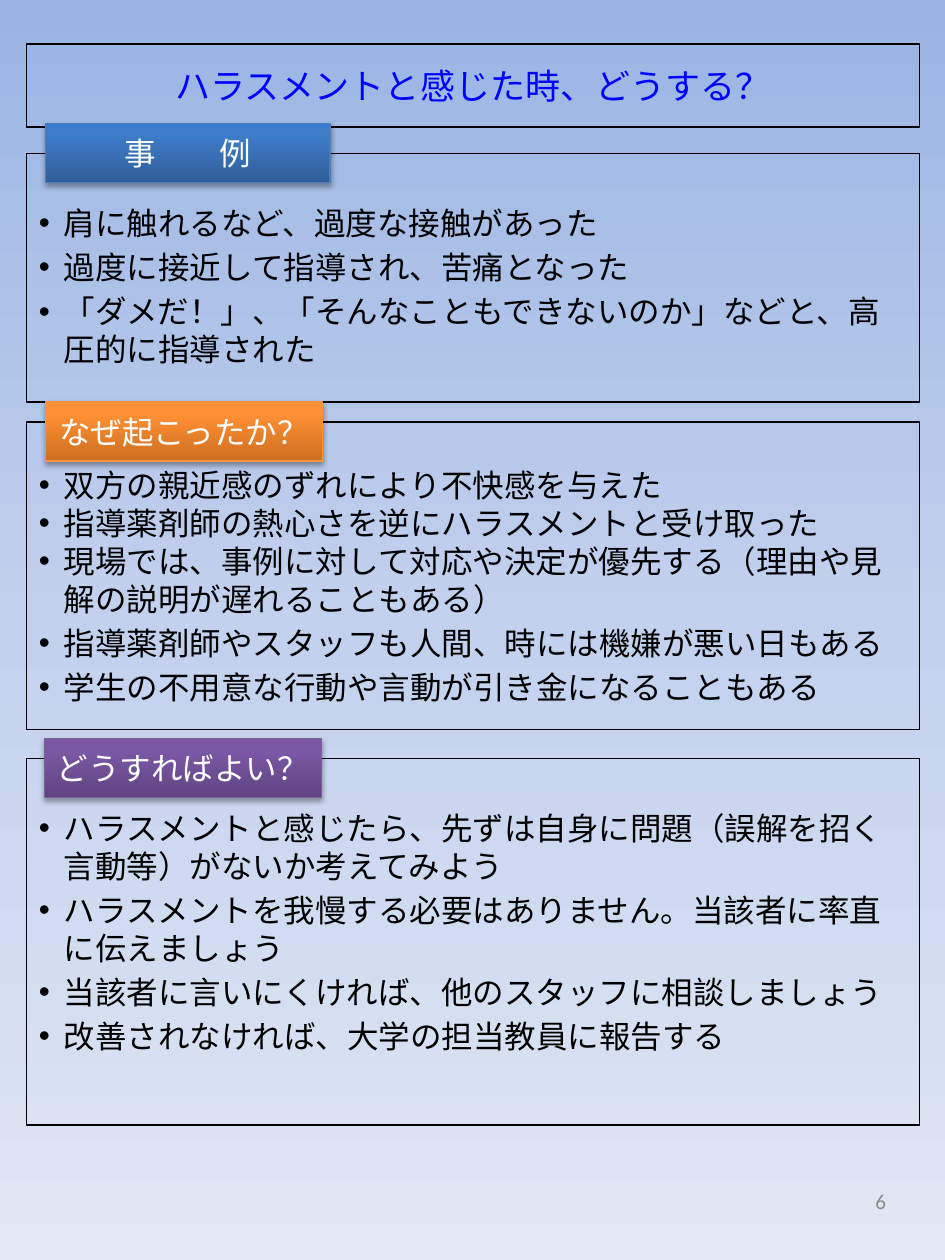
from dataclasses import dataclass
from typing import NamedTuple

from lxml.etree import SubElement
from pptx import Presentation
from pptx.dml.color import RGBColor
from pptx.enum.shapes import MSO_SHAPE as Preset
from pptx.enum.text import MSO_ANCHOR as Anchor, PP_ALIGN as Align
from pptx.oxml.ns import qn
from pptx.util import Inches, Pt


@dataclass(frozen=True)
class Theme:
    japanese: str = "Noto Sans CJK JP"
    latin: str = "Calibri"
    ink: str = "000000"
    heading: str = "0000FF"
    tab_text: str = "FFFFFF"
    number: str = "8C8C8C"
    heading_size: float = 20
    text_size: float = 18
    number_size: float = 12
    paragraph_gap: float = 3.6
    border: float = 0.75
    sky: tuple = ((0, "9AB5E4"), (50, "C2D1ED"), (100, "E1E8F5"))
    blue: tuple = ((0, "2F5F99"), (80, "3D7CC7"), (100, "3A7CCB"))
    orange: tuple = ((0, "CC6E20"), (80, "FF9034"), (100, "FF9136"))
    purple: tuple = ((0, "5F4480"), (80, "7B58A6"), (100, "7C57A8"))
    blue_edge: str = "4B7EBC"
    orange_edge: str = "F69240"
    purple_edge: str = "7D60A0"


THEME = Theme()
WIDTH, HEIGHT = Inches(7.5), Inches(10)
MARGIN, SPAN = 2.8, 94.53
TAB_HEIGHT = 4.7


class Box(NamedTuple):
    left: float
    top: float
    width: float
    height: float

    def lengths(self):
        sides = (WIDTH, HEIGHT, WIDTH, HEIGHT)
        return [round(share * side / 100) for share, side in zip(self, sides)]


def add(parent, tag, **attributes):
    return SubElement(parent, qn(tag), {key: str(value) for key, value in attributes.items()})


def apply_gradient(fill, owner, stops, angle):
    fill.gradient()
    gradient = next(owner.iter(qn("a:gradFill")))
    for child in list(gradient):
        gradient.remove(child)
    stop_list = add(gradient, "a:gsLst")
    for position, color in stops:
        stop = add(stop_list, "a:gs", pos=position * 1000)
        add(stop, "a:srgbClr", val=color)
    add(gradient, "a:lin", ang=angle * 60000, scaled=0)


def write(paragraph, text, *, size=THEME.text_size, color=THEME.ink, font=THEME.japanese,
          align=Align.LEFT, gap=0, bullet=False):
    paragraph.alignment = align
    paragraph.space_before = Pt(gap)
    run = paragraph.add_run()
    run.text = text
    run.font.size = Pt(size)
    run.font.name = font
    run.font.color.rgb = RGBColor.from_string(color)
    add(run.font._element, "a:ea", typeface=font)
    if bullet:
        properties = paragraph._p.get_or_add_pPr()
        properties.set("marL", str(Inches(0.2)))
        properties.set("indent", str(-Inches(0.2)))
        add(properties, "a:buFont", typeface="Arial")
        add(properties, "a:buChar", char="•")


def frame(slide, box, edge=THEME.ink, anchor=Anchor.MIDDLE):
    outline = slide.shapes.add_shape(Preset.RECTANGLE, *box.lengths())
    outline.shadow.inherit = False
    outline.fill.background()
    outline.line.color.rgb = RGBColor.from_string(edge)
    outline.line.width = Pt(THEME.border)
    outline.text_frame.word_wrap = True
    outline.text_frame.vertical_anchor = anchor
    return outline


def heading(slide, box, text):
    banner = frame(slide, box)
    write(banner.text_frame.paragraphs[0], text, size=THEME.heading_size,
          color=THEME.heading, align=Align.CENTER)


def tab(slide, box, text, stops, edge):
    label = frame(slide, box, edge)
    apply_gradient(label.fill, label._element.spPr, stops, 270)
    effects = label._element.spPr.find(qn("a:effectLst"))
    shadow = add(effects, "a:outerShdw", blurRad=Pt(3.1), dist=Pt(1.8),
                 dir=90 * 60000, rotWithShape=0)
    tint = add(shadow, "a:srgbClr", val=THEME.ink)
    add(tint, "a:alpha", val=35000)
    write(label.text_frame.paragraphs[0], text, color=THEME.tab_text, align=Align.CENTER)


def panel(slide, box, points, inset, tight=0):
    body = frame(slide, box, anchor=Anchor.TOP).text_frame
    body.margin_top = Inches(inset)
    for index, point in enumerate(points):
        paragraph = body.add_paragraph() if index else body.paragraphs[0]
        gap = THEME.paragraph_gap if index and index >= tight else 0
        write(paragraph, point, gap=gap, bullet=True)


def page_number(slide, box, text):
    corner = slide.shapes.add_textbox(*box.lengths()).text_frame
    corner.word_wrap = True
    corner.vertical_anchor = Anchor.MIDDLE
    write(corner.paragraphs[0], text, size=THEME.number_size, color=THEME.number,
          font=THEME.latin, align=Align.RIGHT)


def main():
    deck = Presentation()
    deck.slide_width, deck.slide_height = WIDTH, HEIGHT
    slide = deck.slides.add_slide(deck.slide_layouts[6])
    apply_gradient(slide.background.fill, slide._element, THEME.sky, 90)

    heading(slide, Box(MARGIN, 3.5, SPAN, 6.6), "ハラスメントと感じた時、どうする？")

    panel(slide, Box(MARGIN, 12.2, SPAN, 19.7), (
        "肩に触れるなど、過度な接触があった",
        "過度に接近して指導され、苦痛となった",
        "「ダメだ！」、「そんなこともできないのか」などと、高圧的に指導された",
    ), inset=0.4)
    tab(slide, Box(4.8, 9.8, 30.13, TAB_HEIGHT), "事　　例", THEME.blue, THEME.blue_edge)

    panel(slide, Box(MARGIN, 33.5, SPAN, 24.4), (
        "双方の親近感のずれにより不快感を与えた",
        "指導薬剤師の熱心さを逆にハラスメントと受け取った",
        "現場では、事例に対して対応や決定が優先する（理由や見解の説明が遅れることもある）",
        "指導薬剤師やスタッフも人間、時には機嫌が悪い日もある",
        "学生の不用意な行動や言動が引き金になることもある",
    ), inset=0.35, tight=3)
    tab(slide, Box(4.8, 31.9, 29.33, TAB_HEIGHT), "なぜ起こったか？",
        THEME.orange, THEME.orange_edge)

    panel(slide, Box(MARGIN, 60.2, SPAN, 29.1), (
        "ハラスメントと感じたら、先ずは自身に問題（誤解を招く言動等）がないか考えてみよう",
        "ハラスメントを我慢する必要はありません。当該者に率直に伝えましょう",
        "当該者に言いにくければ、他のスタッフに相談しましょう",
        "改善されなければ、大学の担当教員に報告する",
    ), inset=0.4)
    tab(slide, Box(4.67, 58.6, 29.33, TAB_HEIGHT), "どうすればよい？",
        THEME.purple, THEME.purple_edge)

    page_number(slide, Box(71.73, 92.7, 23.33, 5.3), "6")
    deck.save("out.pptx")


if __name__ == "__main__":
    main()
